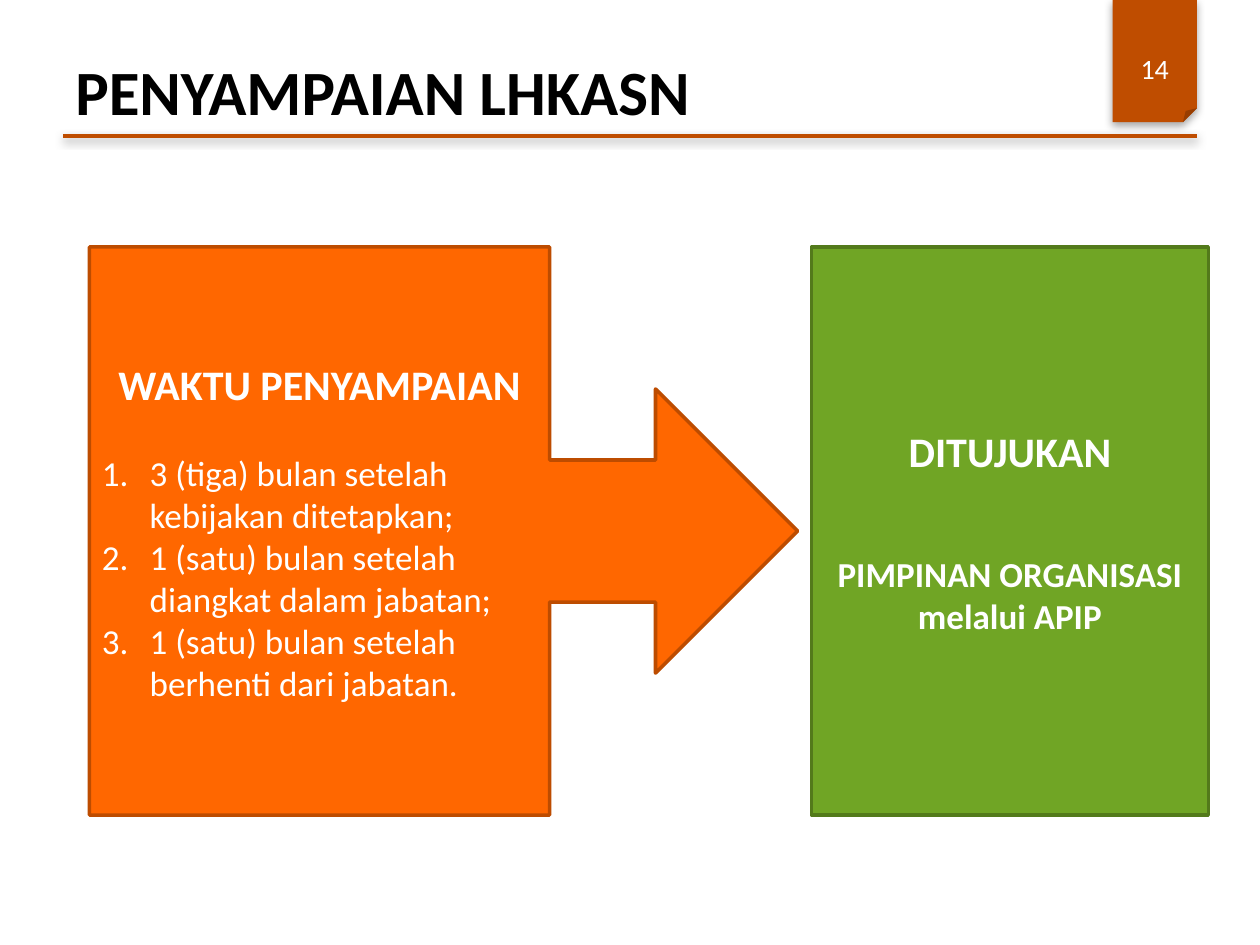
import pptx
import pptx.util
from lxml import etree
from pptx.dml.color import RGBColor
from pptx.enum.shapes import MSO_CONNECTOR, MSO_SHAPE
from pptx.enum.text import MSO_ANCHOR, PP_ALIGN
from pptx.oxml.ns import qn

Inches, Pt = pptx.util.Inches, pptx.util.Pt

TITLE = "PENYAMPAIAN LHKASN"
PAGE = "14"
TIMING = "WAKTU PENYAMPAIAN"
DEADLINES = [
    "3 (tiga) bulan setelah kebijakan ditetapkan;",
    "1 (satu) bulan setelah diangkat dalam jabatan;",
    "1 (satu) bulan setelah berhenti dari jabatan.",
]
ADDRESSED = "DITUJUKAN"
RECIPIENT = "PIMPINAN ORGANISASI melalui APIP"

FONT = "Calibri"
BLACK = RGBColor(0x00, 0x00, 0x00)
WHITE = RGBColor(0xFF, 0xFF, 0xFF)
RUST = RGBColor(0xBF, 0x4D, 0x00)
ORANGE = RGBColor(0xFF, 0x67, 0x00)
ORANGE_EDGE = RGBColor(0xBD, 0x4C, 0x00)
GREEN = RGBColor(0x70, 0xA5, 0x25)
GREEN_EDGE = RGBColor(0x53, 0x7A, 0x1B)

WIDTH, HEIGHT = 10, 7.5
MARGIN = 0.05 * WIDTH
RIGHT = WIDTH - MARGIN
TAB_WIDTH = 0.67
RULE_Y = 1.08
PANEL_TOP, PANEL_HEIGHT = 1.96, 4.51
LIST_INDENT = 0.38


def cast_shadow(shape, opacity, distance):
    """Give a shape or connector a soft black shadow straight below it."""
    properties = shape._element.spPr
    effects = properties.find(qn("a:effectLst"))
    if effects is None:
        effects = etree.SubElement(properties, qn("a:effectLst"))
    shadow = etree.SubElement(effects, qn("a:outerShdw"), blurRad=str(Pt(5)),
                              dist=str(Pt(distance)), dir="5400000", rotWithShape="0")
    black = etree.SubElement(shadow, qn("a:srgbClr"), val="000000")
    etree.SubElement(black, qn("a:alpha"), val=str(opacity * 1000))


def add_block(slide, preset, left, top, width, height, fill, edge=None):
    block = slide.shapes.add_shape(
        preset, Inches(left), Inches(top), Inches(width), Inches(height))
    block.shadow.inherit = False
    block.fill.solid()
    block.fill.fore_color.rgb = fill
    if edge is None:
        block.line.fill.background()
    else:
        block.line.color.rgb = edge
        block.line.width = Pt(2)
    return block


def number(paragraph):
    """Turn a paragraph into a numbered item with a hanging indent."""
    properties = paragraph._p.get_or_add_pPr()
    properties.set("marL", str(Inches(LIST_INDENT)))
    properties.set("indent", str(-Inches(LIST_INDENT)))
    etree.SubElement(properties, qn("a:buFont"), typeface="+mj-lt")
    etree.SubElement(properties, qn("a:buAutoNum"), type="arabicPeriod")


def write(frame, items, color=WHITE):
    """Fill a frame with (text, size, bold, alignment, gap before, numbered) items."""
    frame.word_wrap = True
    frame.vertical_anchor = MSO_ANCHOR.MIDDLE
    for index, (text, size, bold, align, gap, numbered) in enumerate(items):
        paragraph = frame.add_paragraph() if index else frame.paragraphs[0]
        paragraph.text = text
        paragraph.alignment = align
        if gap:
            paragraph.space_before = Pt(gap)
        if numbered:
            number(paragraph)
        font = paragraph.font
        font.name, font.size, font.bold = FONT, Pt(size), bold
        font.color.rgb = color


def add_label(slide, left, top, width, height, item, color):
    label = slide.shapes.add_textbox(
        Inches(left), Inches(top), Inches(width), Inches(height))
    write(label.text_frame, [item], color)


def main():
    deck = pptx.Presentation()
    deck.slide_width, deck.slide_height = Inches(WIDTH), Inches(HEIGHT)
    slide = deck.slides.add_slide(deck.slide_layouts[6])
    center, left = PP_ALIGN.CENTER, PP_ALIGN.LEFT

    tab_left = RIGHT - TAB_WIDTH
    page_tab = add_block(slide, MSO_SHAPE.FOLDED_CORNER, tab_left, 0, TAB_WIDTH, 0.97, RUST)
    cast_shadow(page_tab, 35, 1.8)

    rule = slide.shapes.add_connector(
        MSO_CONNECTOR.STRAIGHT, Inches(MARGIN), Inches(RULE_Y), Inches(RIGHT), Inches(RULE_Y))
    rule.line.color.rgb = RUST
    rule.line.width = Pt(2)
    cast_shadow(rule, 38, 1.6)

    add_label(slide, MARGIN, 0.3, RIGHT - MARGIN, 0.83,
              (TITLE, 36, True, left, 0, False), BLACK)
    add_label(slide, tab_left, 0.33, TAB_WIDTH, 0.42,
              (PAGE, 16, False, center, 0, False), WHITE)

    timing = add_block(slide, MSO_SHAPE.RIGHT_ARROW_CALLOUT, 0.71, PANEL_TOP,
                       5.62, PANEL_HEIGHT, ORANGE, ORANGE_EDGE)
    write(timing.text_frame, [(TIMING, 24, True, center, 0, False)] + [
        (deadline, 20, False, left, 0 if index else 24, True)
        for index, deadline in enumerate(DEADLINES)])

    recipient = add_block(slide, MSO_SHAPE.RECTANGLE, 6.44, PANEL_TOP,
                          3.15, PANEL_HEIGHT, GREEN, GREEN_EDGE)
    write(recipient.text_frame, [(ADDRESSED, 24, True, center, 0, False),
                                 (RECIPIENT, 20, True, center, 44, False)])

    deck.save("out.pptx")


if __name__ == "__main__":
    main()
